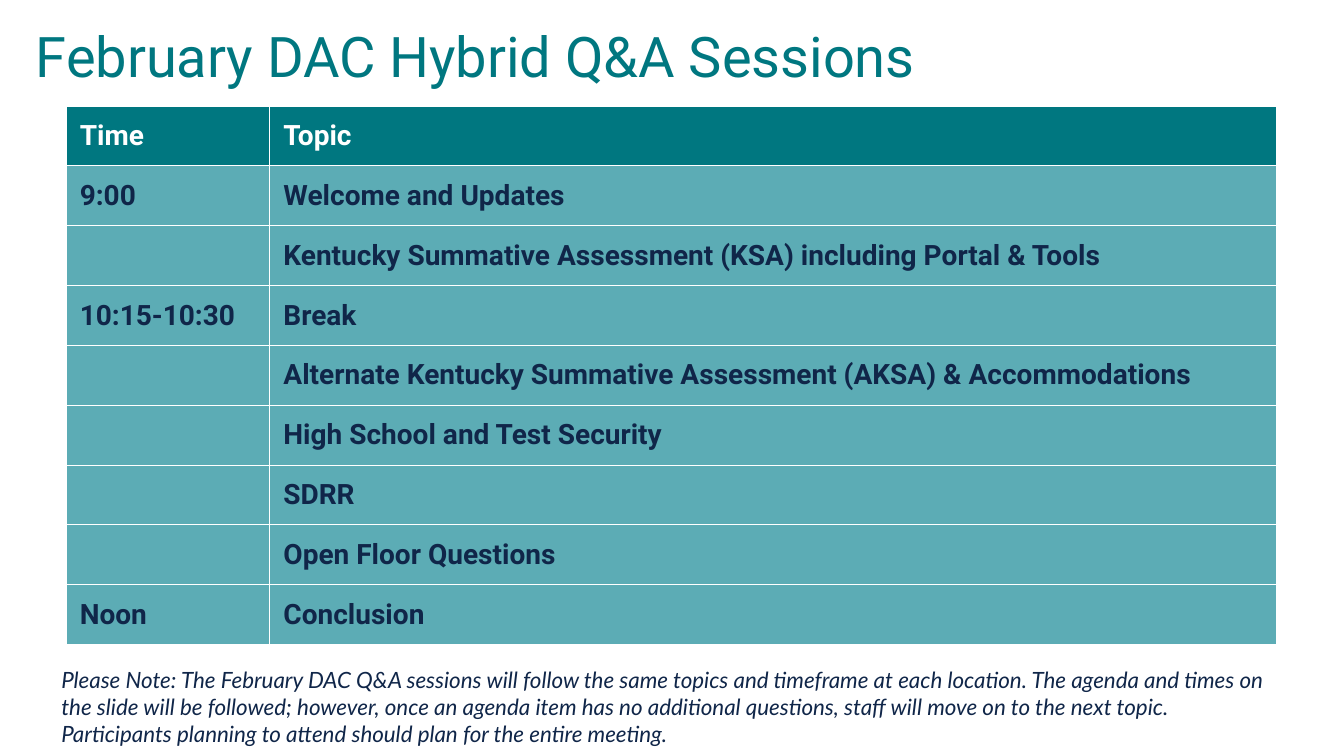
from lxml.etree import SubElement
from pptx import Presentation
from pptx.dml.color import RGBColor
from pptx.enum.text import MSO_ANCHOR, MSO_AUTO_SIZE, PP_ALIGN
from pptx.oxml.ns import qn
from pptx.util import Emu, Pt

TEAL, LIGHT_TEAL, NAVY, WHITE = "007780", "5CACB5", "102649", "FFFFFF"
COLUMN_WIDTHS = [194, 959]
ROW_HEIGHT = 57
AGENDA = [
    ("Time", "Topic"),
    ("9:00", "Welcome and Updates"),
    ("", "Kentucky Summative Assessment (KSA) including Portal & Tools"),
    ("10:15-10:30", "Break"),
    ("", "Alternate Kentucky Summative Assessment (AKSA) & Accommodations"),
    ("", "High School and Test Security"),
    ("", "SDRR"),
    ("", "Open Floor Questions"),
    ("Noon", "Conclusion"),
]
NOTE = (
    "Please Note: The February DAC Q&A sessions will follow the same topics and "
    "timeframe at each location. The agenda and times on the slide will be followed; "
    "however, once an agenda item has no additional questions, staff will move on to "
    "the next topic. Participants planning to attend should plan for the entire meeting."
)


def px(length):
    return Emu(length * 9525)


def color(hex_string):
    return RGBColor.from_string(hex_string)


def write_text(text_frame, text, *, size, fill, font="Roboto", bold=False,
               italic=False, line_spacing=1.0):
    text_frame.text = text
    paragraph = text_frame.paragraphs[0]
    paragraph.alignment = PP_ALIGN.LEFT
    paragraph.line_spacing = line_spacing
    targets = [run.font for run in paragraph.runs] or [paragraph.font]
    for target in targets:
        target.name = font
        target.size = Pt(size)
        target.bold = bold
        target.italic = italic
        target.color.rgb = color(fill)


def add_title(slide, text):
    title = slide.shapes.title
    title.left, title.top, title.width, title.height = map(px, (0, 0, 1104, 114))
    text_frame = title.text_frame
    text_frame.auto_size = MSO_AUTO_SIZE.NONE
    text_frame.vertical_anchor = MSO_ANCHOR.MIDDLE
    text_frame.margin_left = px(34)
    write_text(text_frame, text, size=40, fill=TEAL, line_spacing=0.9)


def add_borders(cell):
    properties = cell._tc.get_or_add_tcPr()
    for side in ("lnL", "lnR", "lnT", "lnB"):
        line = SubElement(properties, qn(f"a:{side}"), w=str(Pt(0.75)))
        fill = SubElement(line, qn("a:solidFill"))
        SubElement(fill, qn("a:srgbClr"), val=WHITE)


def format_cell(cell, text, is_header):
    add_borders(cell)
    cell.fill.solid()
    cell.fill.fore_color.rgb = color(TEAL if is_header else LIGHT_TEAL)
    cell.margin_left = cell.margin_right = px(13)
    cell.margin_top = cell.margin_bottom = px(12)
    cell.vertical_anchor = MSO_ANCHOR.MIDDLE
    write_text(cell.text_frame, text, size=20, bold=True,
               fill=WHITE if is_header else NAVY)


def add_agenda(slide, left, top):
    frame = slide.shapes.add_table(
        len(AGENDA), len(COLUMN_WIDTHS), px(left), px(top),
        px(sum(COLUMN_WIDTHS)), px(ROW_HEIGHT * len(AGENDA)))
    table = frame.table
    for column, width in zip(table.columns, COLUMN_WIDTHS):
        column.width = px(width)
    for index, (row, texts) in enumerate(zip(table.rows, AGENDA)):
        row.height = px(ROW_HEIGHT)
        for cell, text in zip(row.cells, texts):
            format_cell(cell, text, is_header=index == 0)


def add_note(slide, text, left, top, width, height):
    box = slide.shapes.add_textbox(px(left), px(top), px(width), px(height))
    box.text_frame.word_wrap = True
    write_text(box.text_frame, text, size=16, fill=NAVY, font="Lato", italic=True)


def main():
    presentation = Presentation()
    presentation.slide_width = px(1280)
    presentation.slide_height = px(720)
    slide = presentation.slides.add_slide(presentation.slide_layouts[5])
    add_title(slide, "February DAC Hybrid Q&A Sessions")
    add_agenda(slide, 63, 101)
    add_note(slide, NOTE, 49, 630, 1182, 87)
    presentation.save("out.pptx")


if __name__ == "__main__":
    main()
